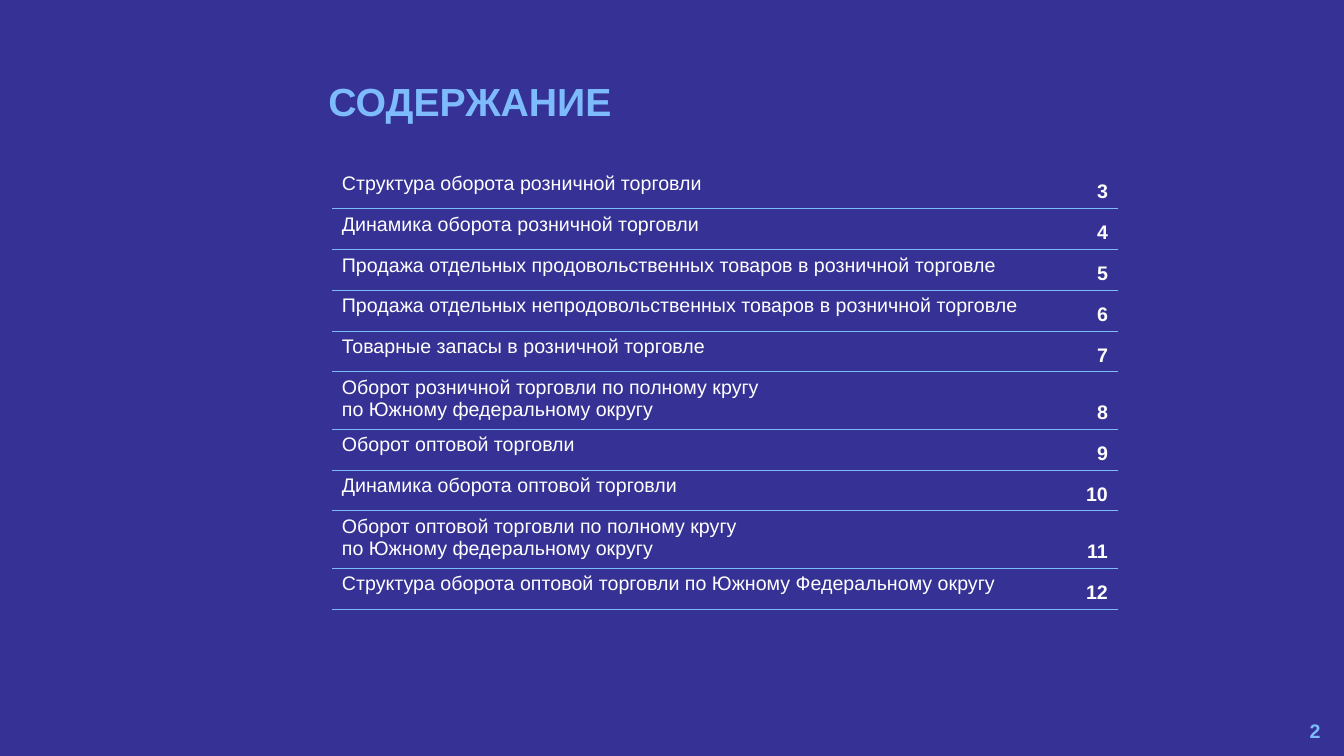
"""Build the table-of-contents slide."""
from dataclasses import dataclass

from lxml.etree import SubElement
from pptx import Presentation
from pptx.dml.color import RGBColor
from pptx.enum.text import MSO_ANCHOR as Anchor, PP_ALIGN as Align
from pptx.oxml.ns import qn
from pptx.slide import Slide
from pptx.table import _Cell as Cell
from pptx.text.text import TextFrame
from pptx.util import Pt

NAVY = RGBColor(0x36, 0x31, 0x94)
SKY = RGBColor(0x7D, 0xBB, 0xFC)
WHITE = RGBColor(0xFF, 0xFF, 0xFF)
ROW_HEIGHT = 29.25
COLUMN_WIDTHS = (512, 49.6)
FIRST_RULE = 1.0
RULE = 0.75


@dataclass(frozen=True)
class Entry:
    """A contents line and its page number."""
    topic: str
    page: int


@dataclass(frozen=True)
class Label:
    """A free-standing text with its box in points."""
    text: str
    left: float
    top: float
    width: float
    height: float
    size: float
    align: Align
    anchor: Anchor
    spacing: float


ENTRIES = [
    Entry("Структура оборота розничной торговли", 3),
    Entry("Динамика оборота розничной торговли", 4),
    Entry("Продажа отдельных продовольственных товаров в розничной торговле", 5),
    Entry("Продажа отдельных непродовольственных товаров в розничной торговле", 6),
    Entry("Товарные запасы в розничной торговле", 7),
    Entry("Оборот розничной торговли по полному кругу\vпо Южному федеральному округу", 8),
    Entry("Оборот оптовой торговли", 9),
    Entry("Динамика оборота оптовой торговли", 10),
    Entry("Оборот оптовой торговли по полному кругу\vпо Южному федеральному округу", 11),
    Entry("Структура оборота оптовой торговли по Южному Федеральному округу", 12),
]

LABELS = [
    Label("СОДЕРЖАНИЕ", 227.5, 55.5, 252.7, 46.8, 28, Align.LEFT, Anchor.TOP, 0.9),
    Label("2", 734.4, 507.6, 216, 28.8, 14, Align.RIGHT, Anchor.MIDDLE, 1.0),
]


def write(frame: TextFrame, text: str, size: float, color: RGBColor,
          bold: bool, align: Align) -> None:
    """Fill a text frame with one uniformly styled paragraph."""
    frame.text = text
    paragraph = frame.paragraphs[0]
    paragraph.alignment = align
    font = paragraph.font
    font.name, font.size, font.bold = "Arial", Pt(size), bold
    font.color.rgb = color


def add_label(slide: Slide, label: Label) -> None:
    """Place a label on the slide."""
    box = slide.shapes.add_textbox(
        Pt(label.left), Pt(label.top), Pt(label.width), Pt(label.height))
    frame = box.text_frame
    frame.word_wrap = True
    frame.vertical_anchor = label.anchor
    write(frame, label.text, label.size, SKY, True, label.align)
    frame.paragraphs[0].line_spacing = label.spacing


def set_rules(cell: Cell, above: float, below: float) -> None:
    """Draw horizontal rules around a cell; zero width means no rule."""
    properties = cell._tc.get_or_add_tcPr()
    for side, width in (("L", 0), ("R", 0), ("T", above), ("B", below)):
        line = SubElement(properties, qn(f"a:ln{side}"), w=str(Pt(width)))
        if width:
            fill = SubElement(line, qn("a:solidFill"))
            SubElement(fill, qn("a:srgbClr"), val=str(SKY))
        else:
            SubElement(line, qn("a:noFill"))


def add_contents(slide: Slide, entries: list[Entry]) -> None:
    """Add the table of topics and page numbers."""
    table = slide.shapes.add_table(
        len(entries), len(COLUMN_WIDTHS), Pt(237), Pt(119.5),
        Pt(sum(COLUMN_WIDTHS)), Pt(ROW_HEIGHT * len(entries))).table
    table.first_row = table.horz_banding = False
    for column, width in zip(table.columns, COLUMN_WIDTHS):
        column.width = Pt(width)
    rules = [0, FIRST_RULE] + [RULE] * (len(entries) - 1)
    for index, entry in enumerate(entries):
        table.rows[index].height = Pt(ROW_HEIGHT)
        topic, page = table.cell(index, 0), table.cell(index, 1)
        write(topic.text_frame, entry.topic, 14, WHITE, False, Align.LEFT)
        write(page.text_frame, str(entry.page), 14, WHITE, True, Align.RIGHT)
        page.vertical_anchor = Anchor.BOTTOM
        for cell in (topic, page):
            set_rules(cell, rules[index], rules[index + 1])
            cell.fill.background()


def main() -> None:
    """Create and save the presentation."""
    presentation = Presentation()
    presentation.slide_width, presentation.slide_height = Pt(960), Pt(540)
    slide = presentation.slides.add_slide(presentation.slide_layouts[6])
    slide.background.fill.solid()
    slide.background.fill.fore_color.rgb = NAVY
    for label in LABELS:
        add_label(slide, label)
    add_contents(slide, ENTRIES)
    presentation.save("out.pptx")


if __name__ == "__main__":
    main()
